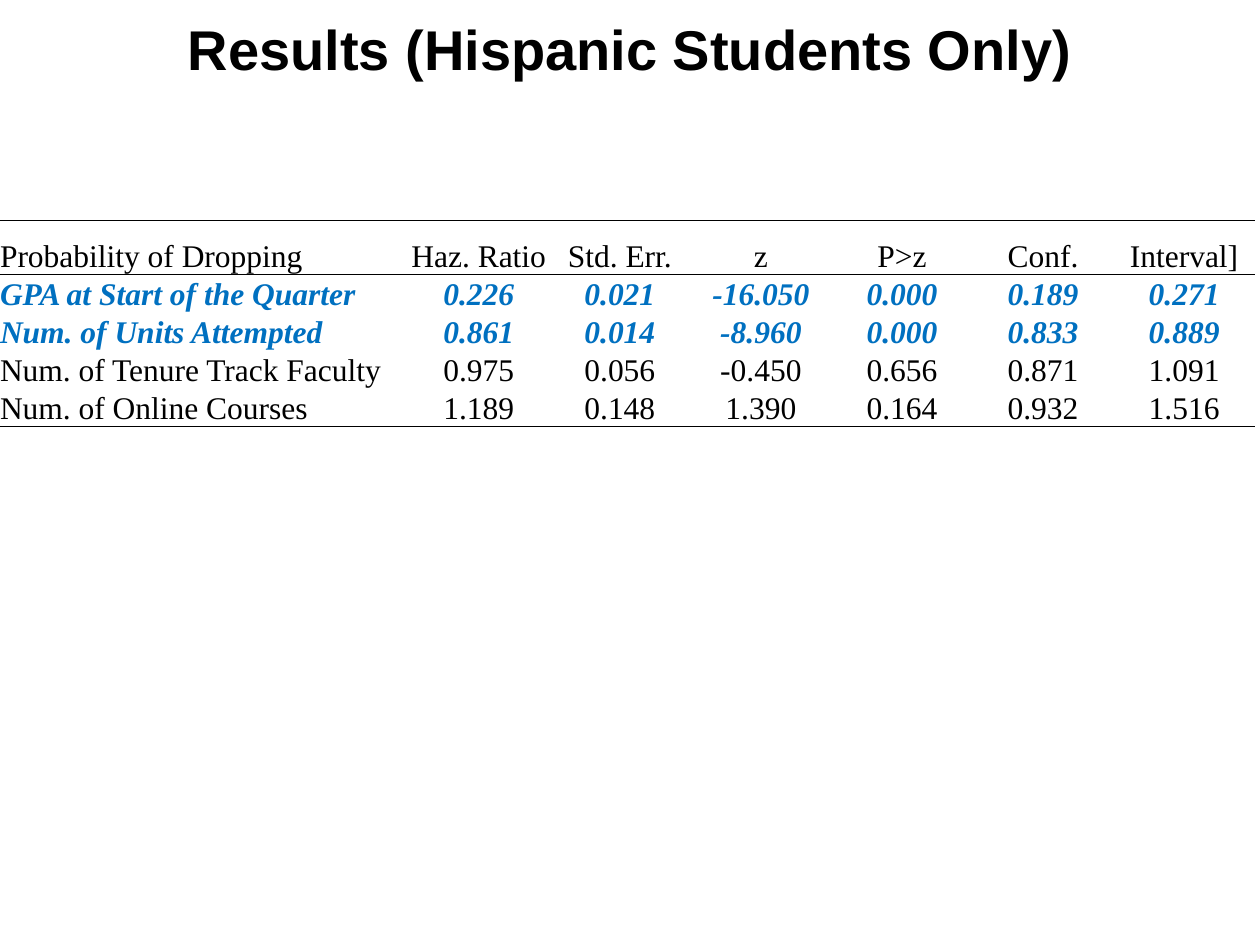
from typing import NamedTuple

from lxml.etree import SubElement
from pptx import Presentation
from pptx.dml.color import RGBColor
from pptx.enum.text import MSO_ANCHOR as Anchor, PP_ALIGN as Align
from pptx.oxml.ns import qn
from pptx.util import Inches, Pt

BLACK = RGBColor(0x00, 0x00, 0x00)
BLUE = RGBColor(0x00, 0x70, 0xC0)
RULE_WIDTH = Pt(0.5)
LABEL_WIDTH, VALUE_WIDTH = 3.24, 1.12
HEADER_HEIGHT, ROW_HEIGHT = 0.43, 0.28
NO_MARGINS = dict.fromkeys(
    ("margin_left", "margin_right", "margin_top", "margin_bottom"), 0)


class TextFormat(NamedTuple):
    name: str
    size: int
    color: RGBColor = BLACK
    bold: bool = False
    italic: bool = False


class ResultRow(NamedTuple):
    label: str
    values: tuple[str, ...]
    significant: bool = False


TITLE = TextFormat("Arial", 32, bold=True)
BODY = TextFormat("Times New Roman", 18)
SIGNIFICANT = BODY._replace(color=BLUE, bold=True, italic=True)

ROWS = (
    ResultRow("Probability of Dropping",
              ("Haz. Ratio", "Std. Err.", "z", "P>z", "Conf.", "Interval]")),
    ResultRow("GPA at Start of the Quarter",
              ("0.226", "0.021", "-16.050", "0.000", "0.189", "0.271"), True),
    ResultRow("Num. of Units Attempted",
              ("0.861", "0.014", "-8.960", "0.000", "0.833", "0.889"), True),
    ResultRow("Num. of Tenure Track Faculty",
              ("0.975", "0.056", "-0.450", "0.656", "0.871", "1.091")),
    ResultRow("Num. of Online Courses",
              ("1.189", "0.148", "1.390", "0.164", "0.932", "1.516")),
)


def set_attributes(target, values: dict) -> None:
    for name, value in values.items():
        setattr(target, name, value)


def write_text(text_frame, text: str, style: TextFormat, alignment: Align) -> None:
    paragraph = text_frame.paragraphs[0]
    paragraph.alignment = alignment
    run = paragraph.add_run()
    run.text = text
    set_attributes(run.font, {"name": style.name, "size": Pt(style.size),
                              "bold": style.bold, "italic": style.italic})
    run.font.color.rgb = style.color


def set_borders(cell, ruled_edges: str) -> None:
    """Rule the edges named in ruled_edges (T, B) and clear the others."""
    properties = cell._tc.get_or_add_tcPr()
    for edge in "LRTB":
        line = SubElement(properties, qn(f"a:ln{edge}"), w=str(RULE_WIDTH))
        if edge in ruled_edges:
            fill = SubElement(line, qn("a:solidFill"))
            SubElement(fill, qn("a:srgbClr"), val=str(BLACK))
        else:
            SubElement(line, qn("a:noFill"))


def add_title(slide, text: str) -> None:
    box = slide.shapes.add_textbox(
        Inches(0.04), Inches(0.03), Inches(9.92), Inches(0.7))
    set_attributes(box.text_frame,
                   {"word_wrap": True, "vertical_anchor": Anchor.MIDDLE})
    write_text(box.text_frame, text, TITLE, Align.CENTER)


def add_results_table(slide, rows: tuple[ResultRow, ...]) -> None:
    widths = [LABEL_WIDTH] + [VALUE_WIDTH] * len(rows[0].values)
    heights = [HEADER_HEIGHT] + [ROW_HEIGHT] * (len(rows) - 1)
    table = slide.shapes.add_table(
        len(rows), len(widths), 0, Inches(1.75),
        Inches(sum(widths)), Inches(sum(heights))).table
    set_attributes(table, {"first_row": False, "horz_banding": False})
    for column, width in zip(table.columns, widths):
        column.width = Inches(width)
    ruled_edges = {0: "TB", 1: "T", len(rows) - 1: "B"}
    for row_index, (row, height) in enumerate(zip(rows, heights)):
        table.rows[row_index].height = Inches(height)
        style = SIGNIFICANT if row.significant else BODY
        for column_index, text in enumerate((row.label, *row.values)):
            cell = table.cell(row_index, column_index)
            set_attributes(cell, NO_MARGINS | {"vertical_anchor": Anchor.BOTTOM})
            set_borders(cell, ruled_edges.get(row_index, ""))
            cell.fill.background()
            alignment = Align.CENTER if column_index else Align.LEFT
            write_text(cell.text_frame, text, style, alignment)


def main() -> None:
    presentation = Presentation()
    set_attributes(presentation,
                   {"slide_width": Inches(10), "slide_height": Inches(7.5)})
    slide = presentation.slides.add_slide(presentation.slide_layouts[6])
    add_title(slide, "Results (Hispanic Students Only)")
    add_results_table(slide, ROWS)
    presentation.save("out.pptx")


if __name__ == "__main__":
    main()
